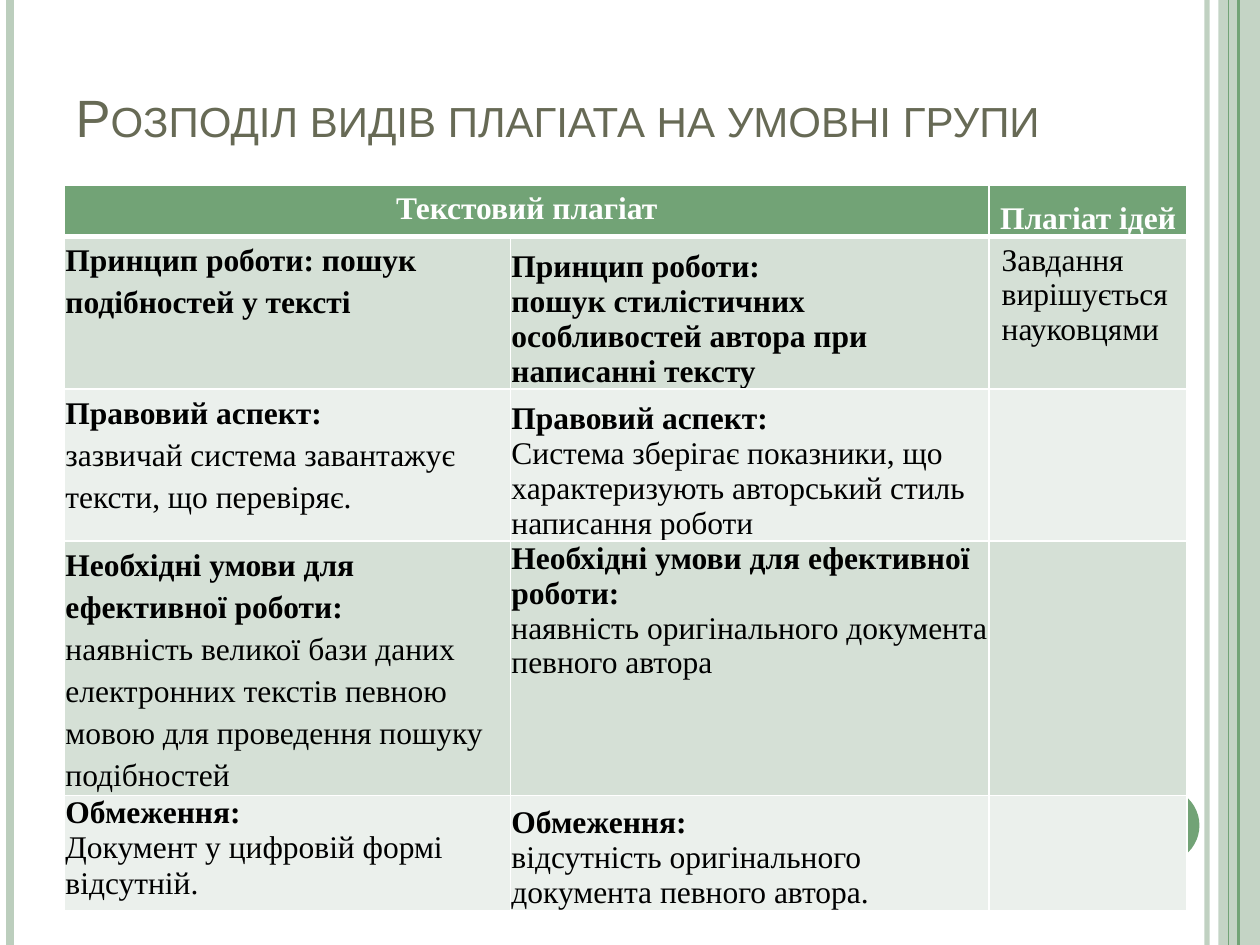
import pptx
import pptx.util
import pptx.dml.color
import pptx.enum.shapes
import pptx.enum.text
import pptx.oxml
import pptx.oxml.ns

Cm = pptx.util.Cm
Pt = pptx.util.Pt
Shape = pptx.enum.shapes.MSO_SHAPE
Anchor = pptx.enum.text.MSO_ANCHOR
Align = pptx.enum.text.PP_ALIGN
qn = pptx.oxml.ns.qn
ns = pptx.oxml.ns.nsdecls("a")


def paint(color, code, alpha=100):
    color.rgb = pptx.dml.color.RGBColor.from_string(code)
    if alpha < 100:
        node = color._xFill.find(qn("a:srgbClr"))
        node.append(pptx.oxml.parse_xml(f'<a:alpha {ns} val="{alpha * 1000}"/>'))


deck = pptx.Presentation()
deck.slide_width, deck.slide_height = Cm(25.4), Cm(19.05)
slide = deck.slides.add_slide(deck.slide_layouts[5])
shapes = slide.shapes

bars = [
    (24.33, "BCCEBD", 3, 93),
    (0.2, "BCCEBD", 4.5, 100),
    (24.97, "72A376", 1.5, 100),
    (24.77, "72A376", 0.75, 100),
]
forms = [
    (Shape.RECTANGLE, 24.56, 0, 0.84, 19.05, "BCCEBD", 87),
    (Shape.OVAL, 22.66, 15.88, 1.52, 1.52, "72A376", 100),
]
for kind, left, top, width, height, code, alpha in forms:
    form = shapes.add_shape(kind, Cm(left), Cm(top), Cm(width), Cm(height))
    form.shadow.inherit = False
    form.fill.solid()
    paint(form.fill.fore_color, code, alpha)
    form.line.fill.background()
for left, code, width, alpha in bars:
    bar = shapes.add_connector(
        pptx.enum.shapes.MSO_CONNECTOR.STRAIGHT, Cm(left), 0, Cm(left), Cm(19.05)
    )
    bar.line.width = Pt(width)
    bar.line.fill.solid()
    paint(bar.line.fill.fore_color, code, alpha)
    bar._element.spPr.append(pptx.oxml.parse_xml(f"<a:effectLst {ns}/>"))

title = shapes.title
title.left, title.top, title.width, title.height = Cm(1.27), Cm(0.76), Cm(20.75), Cm(2.36)
title.text = "Розподіл видів плагіата на умовні групи"
title.text_frame.vertical_anchor = Anchor.BOTTOM
head = title.text_frame.paragraphs[0]
head.alignment = Align.LEFT
head.font.size = Pt(30)
head.font.name = "Arial"
paint(head.font.color, "676A55")
head.runs[0]._r.get_or_add_rPr().set("cap", "small")

cols = [8.99, 9.65, 3.99]
rows = [1.04, 3.07, 3.07, 5.13, 2.31]
fills = ["72A376", "D5E0D6", "EBF0EC", "D5E0D6", "EBF0EC"]
needs = "Необхідні умови для ефективної роботи:"
texts = [
    [["Текстовий плагіат"], [], ["Плагіат ідей"]],
    [
        ["Принцип роботи: пошук подібностей у тексті"],
        ["Принцип роботи:", "пошук стилістичних особливостей автора при написанні тексту"],
        ["Завдання", "вирішується", "науковцями"],
    ],
    [
        ["Правовий аспект:", "зазвичай система завантажує тексти, що перевіряє."],
        [
            "Правовий аспект:",
            "Система зберігає показники, що характеризують авторський стиль написання роботи",
        ],
        [],
    ],
    [
        [
            needs,
            "наявність великої бази даних електронних текстів певною мовою "
            "для проведення пошуку подібностей",
        ],
        [needs, "наявність оригінального документа певного автора"],
        [],
    ],
    [
        ["Обмеження:", "Документ у цифровій формі відсутній."],
        ["Обмеження:", "відсутність оригінального документа певного автора."],
        [],
    ],
]
pitch = {(0, 2): 21, (1, 0): 24, (2, 0): 24, (3, 0): 24, (4, 0): 20}
roomy = [(0, 0), (1, 2), (2, 2), (3, 2), (4, 2)]
low = [(0, 2), (1, 1), (2, 1), (4, 1)]

for left in (1.27, 1.3):
    frame = shapes.add_table(5, 3, Cm(left), Cm(3.73), Cm(sum(cols)), Cm(sum(rows)))
    table = frame.table
    for col, width in zip(table.columns, cols):
        col.width = Cm(width)
    for row, height in zip(table.rows, rows):
        row.height = Cm(height)
    table.cell(0, 0).merge(table.cell(0, 1))
    for r, line in enumerate(texts):
        for c, parts in enumerate(line):
            spot = (r, c)
            cell = table.cell(r, c)
            if spot not in roomy:
                cell.margin_left = cell.margin_right = Cm(0.02)
                cell.margin_top = cell.margin_bottom = 0
            cell.vertical_anchor = Anchor.BOTTOM if spot in low else Anchor.TOP
            props = cell._tc.get_or_add_tcPr()
            for side in "LRTB":
                thick = (side == "B" and r == 0) or (side == "T" and r == 1)
                props.append(pptx.oxml.parse_xml(
                    f'<a:ln{side} {ns} w="{Pt(3 if thick else 1)}"><a:solidFill>'
                    f'<a:srgbClr val="FFFFFF"/></a:solidFill></a:ln{side}>'
                ))
            cell.fill.solid()
            paint(cell.fill.fore_color, fills[r])
            if not parts:
                continue
            cell.text = "\n".join(parts)
            for i, para in enumerate(cell.text_frame.paragraphs):
                para.alignment = Align.CENTER if r == 0 else Align.LEFT
                if spot in pitch:
                    para.line_spacing = Pt(pitch[spot])
                font = para.font
                font.size = Pt(18)
                font.name = "Times New Roman"
                font.bold = spot != (1, 2) and (i == 0 or spot == (1, 1))
                paint(font.color, "FFFFFF" if r == 0 else "000000")

deck.save("out.pptx")
